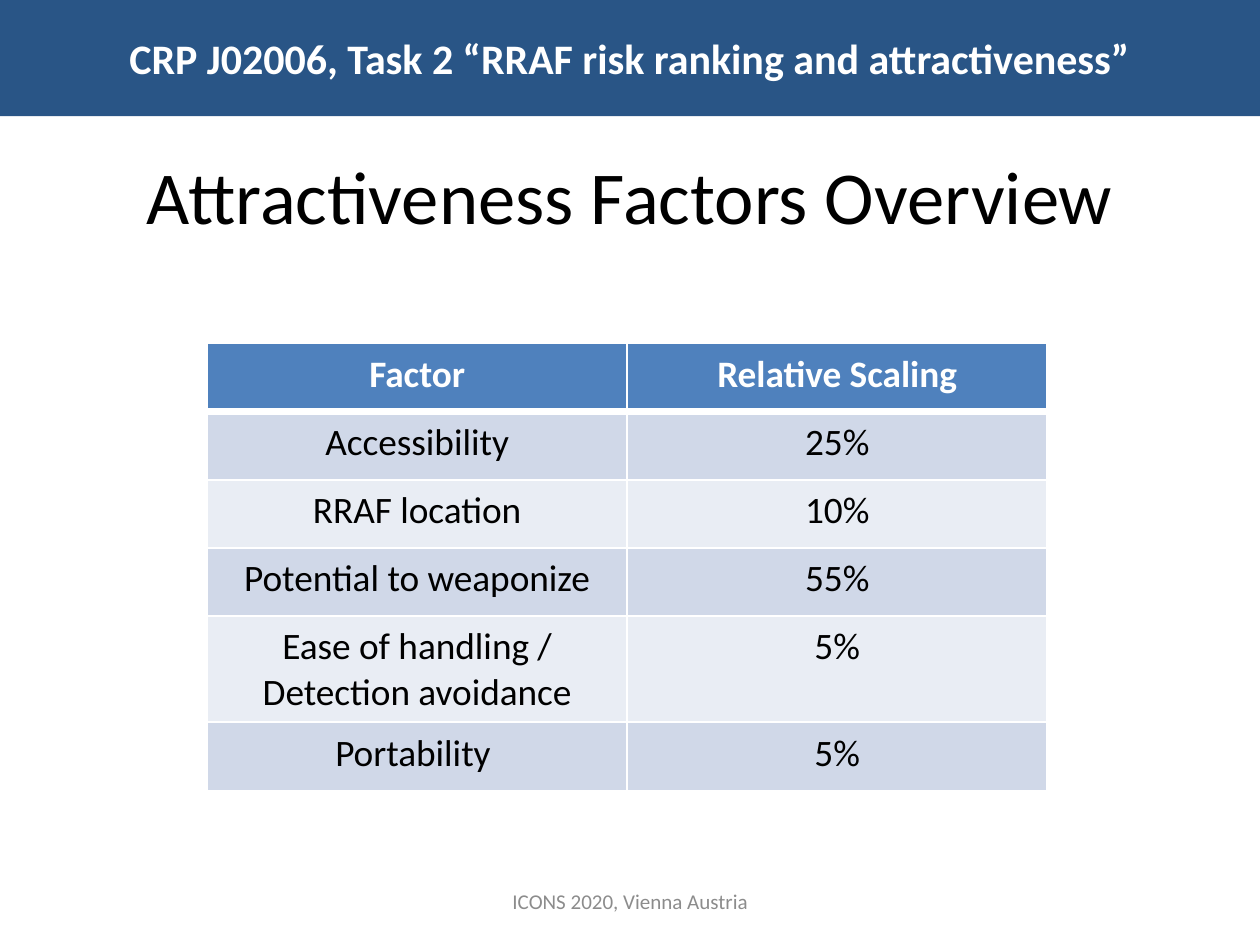
from lxml.etree import SubElement
from pptx import Presentation
from pptx.dml.color import RGBColor
from pptx.enum.shapes import MSO_SHAPE as Shape
from pptx.enum.text import MSO_ANCHOR as Anchor, PP_ALIGN as Align
from pptx.oxml.ns import qn
from pptx.util import Pt

WHITE = "FFFFFF"
BLACK = "000000"
BANNER_BLUE = "295586"
HEADER_BLUE = "4F81BD"
BANDS = ("D0D8E8", "E9EDF4")

FACTORS = [
    ("Factor", "Relative Scaling"),
    ("Accessibility", "25%"),
    ("RRAF location", "10%"),
    ("Potential to weaponize", "55%"),
    ("Ease of handling / Detection avoidance", "5%"),
    ("Portability ", "5%"),
]
ROW_HEIGHTS = (29.2, 29.2, 29.2, 29.2, 45.4, 29.2)


def paint(target, color):
    """Give a fill or font a solid colour from a hex string."""
    if hasattr(target, "solid"):
        target.solid()
        target.fore_color.rgb = RGBColor.from_string(color)
    else:
        target.color.rgb = RGBColor.from_string(color)


def write(frame, text, size, color=BLACK, bold=False):
    """Write one centred line of Calibri into a text frame."""
    line = frame.paragraphs[0]
    line.alignment = Align.CENTER
    run = line.add_run()
    run.text = text
    run.font.name = "Calibri"
    run.font.size = Pt(size)
    run.font.bold = bold
    paint(run.font, color)


def set_insets(frame):
    """Wrap the text, centre it vertically and set its margins."""
    frame.word_wrap = True
    frame.vertical_anchor = Anchor.MIDDLE
    frame.margin_left = frame.margin_right = Pt(5.4)
    frame.margin_top = frame.margin_bottom = Pt(2.7)


def add_banner(slide, left, top, width, height, text):
    """Draw the coloured strip with the task name."""
    banner = slide.shapes.add_shape(
        Shape.RECTANGLE, Pt(left), Pt(top), Pt(width), Pt(height))
    banner.shadow.inherit = False
    banner.line.fill.background()
    paint(banner.fill, BANNER_BLUE)
    set_insets(banner.text_frame)
    write(banner.text_frame, text, 18, color=WHITE, bold=True)


def add_label(slide, left, top, width, height, text, **style):
    """Place a centred text box in the given box."""
    label = slide.shapes.add_textbox(Pt(left), Pt(top), Pt(width), Pt(height))
    set_insets(label.text_frame)
    write(label.text_frame, text, **style)


def set_borders(cell, bottom=1, top=1):
    """Draw white lines around a cell, with the given widths in points."""
    properties = cell._tc.get_or_add_tcPr()
    widths = {"a:lnL": 1, "a:lnR": 1, "a:lnT": top, "a:lnB": bottom}
    for side, points in widths.items():
        border = SubElement(properties, qn(side), w=str(Pt(points)))
        solid = SubElement(border, qn("a:solidFill"))
        SubElement(solid, qn("a:srgbClr"), val=WHITE)


def add_factor_table(slide, left, top, width, rows, heights):
    """Build the table of factors with a header and banded rows."""
    columns = len(rows[0])
    table = slide.shapes.add_table(
        len(rows), columns, Pt(left), Pt(top), Pt(width), Pt(sum(heights))).table
    for column in table.columns:
        column.width = Pt(width / columns)
    for row, (values, height) in enumerate(zip(rows, heights)):
        table.rows[row].height = Pt(height)
        header = row == 0
        for column, value in enumerate(values):
            cell = table.cell(row, column)
            set_borders(cell, bottom=3 if header else 1, top=3 if row == 1 else 1)
            paint(cell.fill, HEADER_BLUE if header else BANDS[(row - 1) % 2])
            write(cell.text_frame, value, 16,
                  color=WHITE if header else BLACK, bold=header)


def main():
    """Build the slide and save it."""
    deck = Presentation()
    deck.slide_width, deck.slide_height = Pt(540), Pt(405)
    slide = deck.slides.add_slide(deck.slide_layouts[6])
    add_banner(slide, 0, 0, 540, 49.8,
               "CRP J02006, Task 2 “RRAF risk ranking and attractiveness”")
    add_label(slide, 27, 49.8, 486, 67.5, "Attractiveness Factors Overview", size=32)
    add_factor_table(slide, 88.8, 147.2, 360, FACTORS, ROW_HEIGHTS)
    add_label(slide, 184.5, 375.4, 171, 21.6, "ICONS 2020, Vienna Austria",
              size=9, color="8C8C8C")
    deck.save("out.pptx")


if __name__ == "__main__":
    main()
